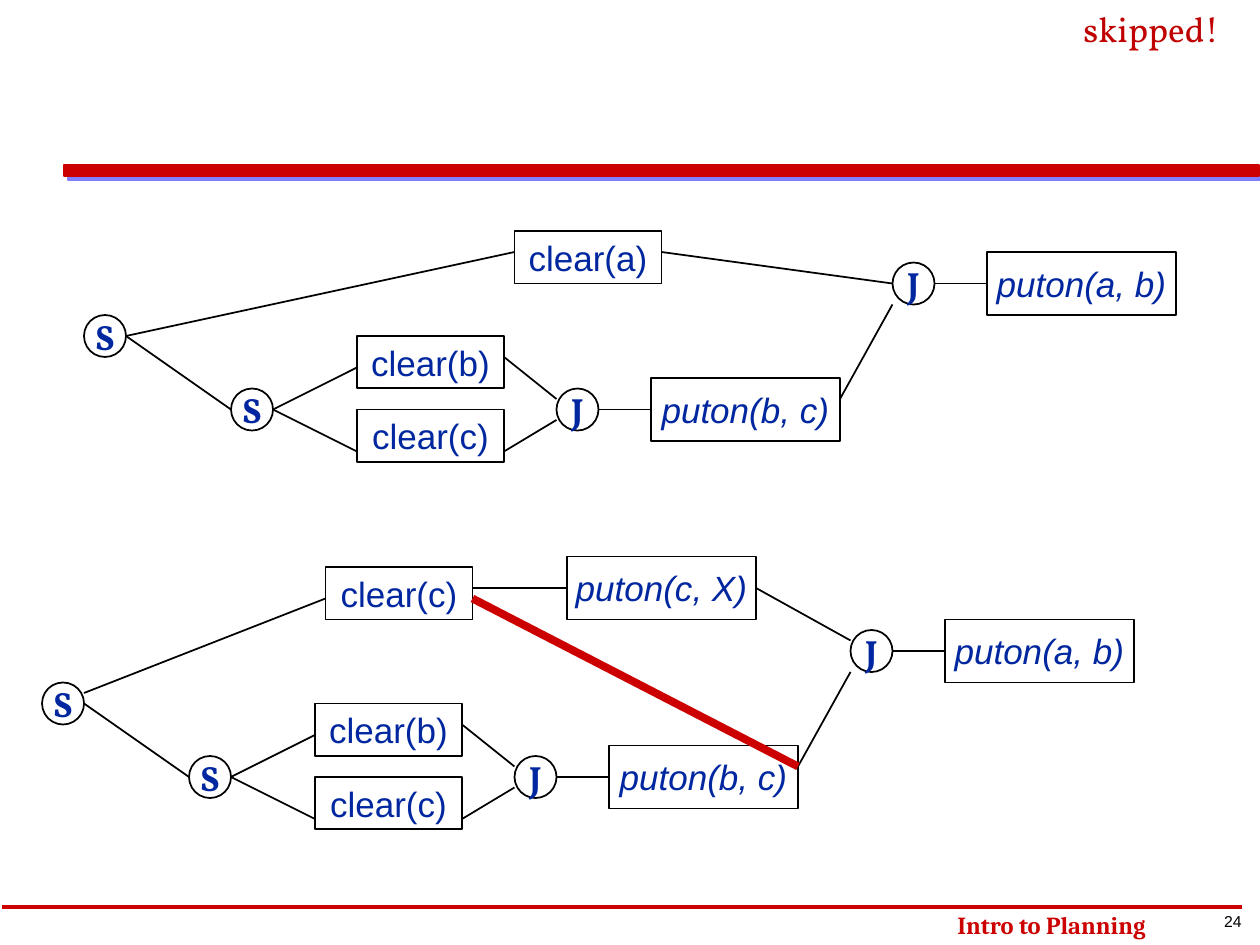
from lxml import etree
from pptx import Presentation
from pptx.dml.color import RGBColor
from pptx.enum.shapes import MSO_CONNECTOR, MSO_SHAPE
from pptx.enum.text import MSO_ANCHOR, MSO_AUTO_SIZE, PP_ALIGN
from pptx.oxml import parse_xml
from pptx.oxml.ns import nsdecls, qn
from pptx.util import Inches, Pt

RED = RGBColor(0xCC, 0x00, 0x00)
DARK_RED = RGBColor(0xC0, 0x00, 0x00)
NAVY = RGBColor(0x00, 0x27, 0x9F)
BLACK = RGBColor(0x00, 0x00, 0x00)

# The plan nets sit on a grid of twelfths of an inch.
GRID = 12
# kind: shape, width, height, font, bold, italic
KINDS = {
    "action": (MSO_SHAPE.RECTANGLE, 18, 6, "Arial", False, True),
    "goal": (MSO_SHAPE.RECTANGLE, 14, 5, "Arial", False, False),
    "node": (MSO_SHAPE.OVAL, 4, 4, "Vollkorn", True, False),
}

# Parts found in both nets: kind, text, left, top
SHARED_PARTS = [
    ("action", "puton(a, b)", 94, 24),
    ("action", "puton(b, c)", 62, 36),
    ("node", "S", 8, 30),
    ("node", "J", 85, 25),
    ("goal", "clear(b)", 34, 32),
    ("goal", "clear(c)", 34, 39),
    ("node", "S", 22, 37),
    ("node", "J", 53, 37),
]
SHARED_LINKS = [
    (12, 32, 22, 39), (89, 27, 94, 27), (26, 39, 34, 35),
    (26, 39, 34, 43), (48, 34, 53, 38), (48, 43, 53, 40),
    (57, 39, 62, 39), (80, 38, 85, 29),
]
# Each net: offset from the first one, own parts, own links
NETS = [
    ((0, 0),
     [("goal", "clear(a)", 49, 22)],
     [(12, 32, 49, 24), (63, 24, 85, 27)]),
    ((-4, 35),
     [("action", "puton(c, X)", 58, 18), ("goal", "clear(c)", 35, 19)],
     [(12, 31, 35, 22), (49, 21, 58, 21), (76, 21, 85, 26)]),
]
CONFLICT = (76, 73, 45, 57)

# text, left, top, width, height, size, font, colour, bold, alignment, wrap
LABELS = [
    ("24", 9.61, 7.19, 0.35, 0.25, 9, "Arial", BLACK, False, PP_ALIGN.CENTER, False),
    ("Intro to Planning", 7.5, 7.17, 2.33, 0.33, 14, "Cambria", RED, True, PP_ALIGN.LEFT, True),
    ("skipped!", 8.5, 0.01, 1.28, 0.44, 20, "Vollkorn", DARK_RED, False, PP_ALIGN.LEFT, False),
]


def write(shape, text, size, font, color, bold, italic, align, wrap):
    frame = shape.text_frame
    frame.word_wrap = wrap
    para = frame.paragraphs[0]
    para.text = text
    para.alignment = align
    face = para.font
    face.size, face.name = Pt(size), font
    face.bold, face.italic = bold, italic
    face.color.rgb = color
    return frame


def add_line(slide, ends, color=BLACK, width=1):
    line = slide.shapes.add_connector(
        MSO_CONNECTOR.STRAIGHT, *(Inches(end) for end in ends))
    line.line.color.rgb = color
    line.line.width = Pt(width)
    etree.SubElement(line._element.spPr, qn("a:effectLst"))


def add_link(slide, ends, **style):
    add_line(slide, [end / GRID for end in ends], **style)


def add_part(slide, kind, text, left, top):
    form, width, height, font, bold, italic = KINDS[kind]
    box = [Inches(n / GRID) for n in (left, top, width, height)]
    part = slide.shapes.add_shape(form, *box)
    part.shadow.inherit = False
    part.fill.background()
    part.line.color.rgb = BLACK
    part.line.width = Pt(1)
    frame = write(part, text, 20, font, NAVY, bold, italic, PP_ALIGN.CENTER, False)
    frame.vertical_anchor = MSO_ANCHOR.MIDDLE


def add_net(slide, shift, parts, links):
    dx, dy = shift
    for kind, text, left, top in SHARED_PARTS + parts:
        add_part(slide, kind, text, left + dx, top + dy)
    for x1, y1, x2, y2 in SHARED_LINKS + links:
        add_link(slide, (x1 + dx, y1 + dy, x2 + dx, y2 + dy))


def add_title_bar(slide):
    bar = slide.shapes.add_shape(
        MSO_SHAPE.RECTANGLE, Inches(0.51), Inches(1.31), Inches(9.48), Inches(0.09))
    bar.fill.solid()
    bar.fill.fore_color.rgb = RED
    bar.line.color.rgb = RED
    bar.line.width = Pt(1)
    bar._element.spPr.append(parse_xml(
        f'<a:effectLst {nsdecls("a")}>'
        f'<a:outerShdw dist="{Pt(2.8)}" dir="2700000" algn="ctr" rotWithShape="0">'
        '<a:srgbClr val="8080FF"/></a:outerShdw></a:effectLst>'))


def add_label(slide, text, left, top, width, height, size, font, color, bold, align, wrap):
    box = slide.shapes.add_textbox(*(Inches(n) for n in (left, top, width, height)))
    frame = write(box, text, size, font, color, bold, False, align, wrap)
    frame.auto_size = MSO_AUTO_SIZE.SHAPE_TO_FIT_TEXT


def main():
    deck = Presentation()
    deck.slide_width, deck.slide_height = Inches(10), Inches(7.5)
    slide = deck.slides.add_slide(deck.slide_layouts[6])
    add_title_bar(slide)
    add_line(slide, (9.86, 7.2, 0.02, 7.2), color=RED, width=2)
    for net in NETS:
        add_net(slide, *net)
    add_link(slide, CONFLICT, color=RED, width=4.5)
    for label in LABELS:
        add_label(slide, *label)
    deck.save("out.pptx")


if __name__ == "__main__":
    main()
